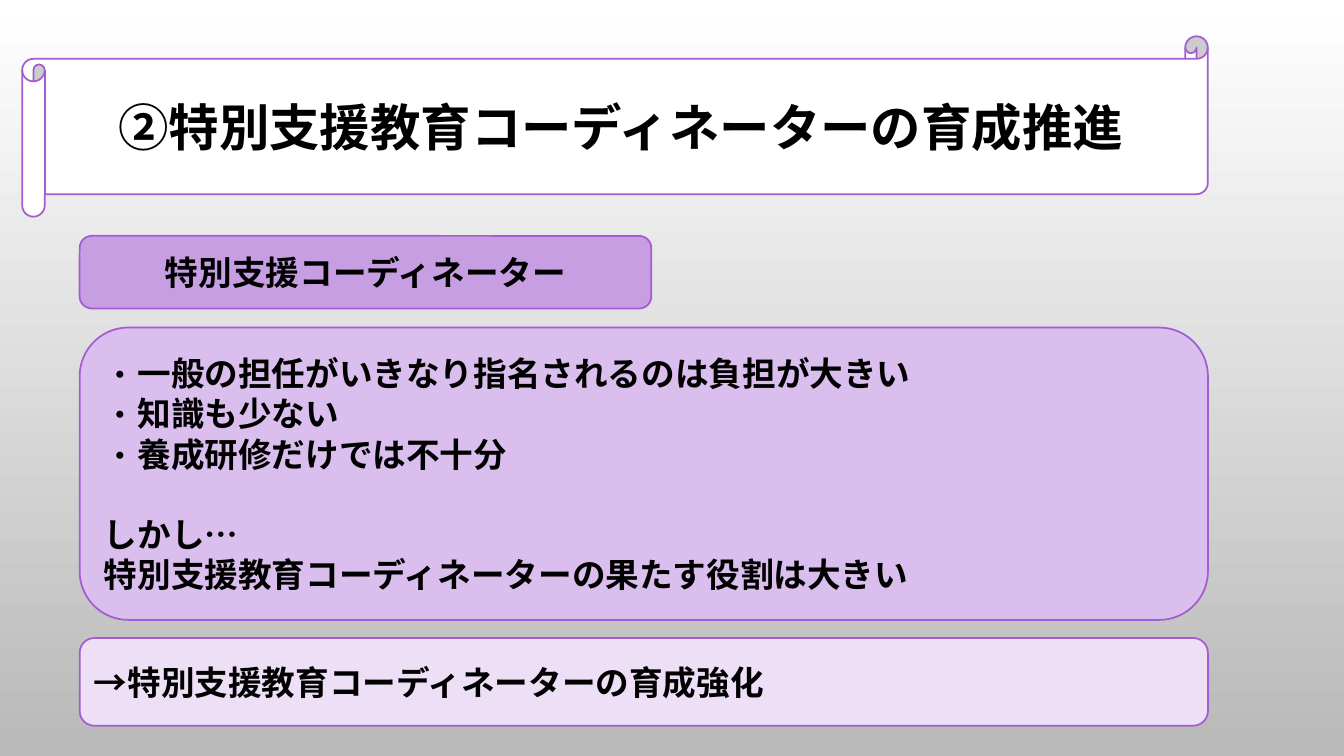
from lxml.etree import SubElement
from pptx import Presentation
from pptx.dml.color import RGBColor
from pptx.enum.shapes import MSO_SHAPE
from pptx.enum.text import MSO_ANCHOR, PP_ALIGN
from pptx.oxml.ns import qn
from pptx.util import Inches, Pt

COLORS = {
    "text": "000000",
    "outline": "A35DD1",
    "scroll": "FFFFFF",
    "heading": "C89EE3",
    "issues": "DABEED",
    "conclusion": "EDDFF6",
    "background_top": "FFFFFF",
    "background_bottom": "B9B9B9",
}
JAPANESE_FONT = "Noto Sans CJK JP"
LATIN_FONT = "Cabin"
LEFT = 0.79
FULL_WIDTH = 11.19
BODY_SIZE = 24
LINE_PITCH = Pt(28.8)

ISSUES = [
    "一般の担任がいきなり指名されるのは負担が大きい",
    "知識も少ない",
    "養成研修だけでは不十分",
]
ROLE = ["しかし…", "特別支援教育コーディネーターの果たす役割は大きい"]


def color(name):
    return RGBColor.from_string(COLORS[name])


def paint_background(slide):
    fill = slide.background.fill
    fill.gradient()
    fill.gradient_angle = 270
    for stop, name in zip(fill.gradient_stops, ("background_top", "background_bottom")):
        stop.color.rgb = color(name)


def add_panel(slide, kind, left, top, width, height, fill_name):
    shape = slide.shapes.add_shape(
        kind, Inches(left), Inches(top), Inches(width), Inches(height))
    shape.shadow.inherit = False
    shape.fill.solid()
    shape.fill.fore_color.rgb = color(fill_name)
    shape.line.color.rgb = color("outline")
    shape.line.width = Pt(1.25)
    return shape


def write_lines(shape, lines, size=BODY_SIZE, font_name=LATIN_FONT, align=PP_ALIGN.LEFT):
    frame = shape.text_frame
    frame.word_wrap = True
    frame.vertical_anchor = MSO_ANCHOR.MIDDLE
    frame.text = "\n".join(lines)
    for paragraph in frame.paragraphs:
        paragraph.alignment = align
        for run in paragraph.runs:
            run.font.name = font_name
            run.font.size = Pt(size)
            run.font.bold = True
            run.font.color.rgb = color("text")
            east_asian = SubElement(run.font._element, qn("a:ea"))
            east_asian.set("typeface", JAPANESE_FONT)
    return frame.paragraphs


def add_bullet(paragraph):
    properties = paragraph._p.get_or_add_pPr()
    indent = Pt(BODY_SIZE)
    properties.set("marL", str(indent))
    properties.set("indent", str(-indent))
    SubElement(properties, qn("a:buFont")).set("typeface", JAPANESE_FONT)
    SubElement(properties, qn("a:buChar")).set("char", "・")


def add_scroll_title(slide, text):
    """Draw the scroll and lay the title placeholder over its inner area."""
    scroll = add_panel(
        slide, MSO_SHAPE.HORIZONTAL_SCROLL, 0.22, 0.36, 11.76, 1.79, "scroll")
    title = slide.shapes.title
    title.left, title.top = Inches(0.44), Inches(0.58)
    title.width, title.height = Inches(11.43), Inches(1.34)
    write_lines(title, [text], 36, JAPANESE_FONT, PP_ALIGN.CENTER)
    scroll._element.addnext(title._element)


def add_issues(slide):
    panel = add_panel(
        slide, MSO_SHAPE.ROUNDED_RECTANGLE, LEFT, 3.25, FULL_WIDTH, 2.9, "issues")
    paragraphs = write_lines(panel, ISSUES + ROLE, font_name=JAPANESE_FONT)
    for paragraph in paragraphs:
        paragraph.line_spacing = LINE_PITCH
    for paragraph in paragraphs[:len(ISSUES)]:
        add_bullet(paragraph)
    paragraphs[len(ISSUES)].space_before = LINE_PITCH


def main():
    presentation = Presentation()
    presentation.slide_width = Inches(13.33)
    presentation.slide_height = Inches(7.5)
    slide = presentation.slides.add_slide(presentation.slide_layouts[5])
    paint_background(slide)
    add_scroll_title(slide, "②特別支援教育コーディネーターの育成推進")

    heading = add_panel(
        slide, MSO_SHAPE.ROUNDED_RECTANGLE, LEFT, 2.34, 5.67, 0.72, "heading")
    write_lines(heading, ["特別支援コーディネーター"], align=PP_ALIGN.CENTER)

    add_issues(slide)

    conclusion = add_panel(
        slide, MSO_SHAPE.ROUNDED_RECTANGLE, LEFT, 6.33, FULL_WIDTH, 0.87, "conclusion")
    write_lines(conclusion, ["→特別支援教育コーディネーターの育成強化"])

    presentation.save("out.pptx")


if __name__ == "__main__":
    main()
